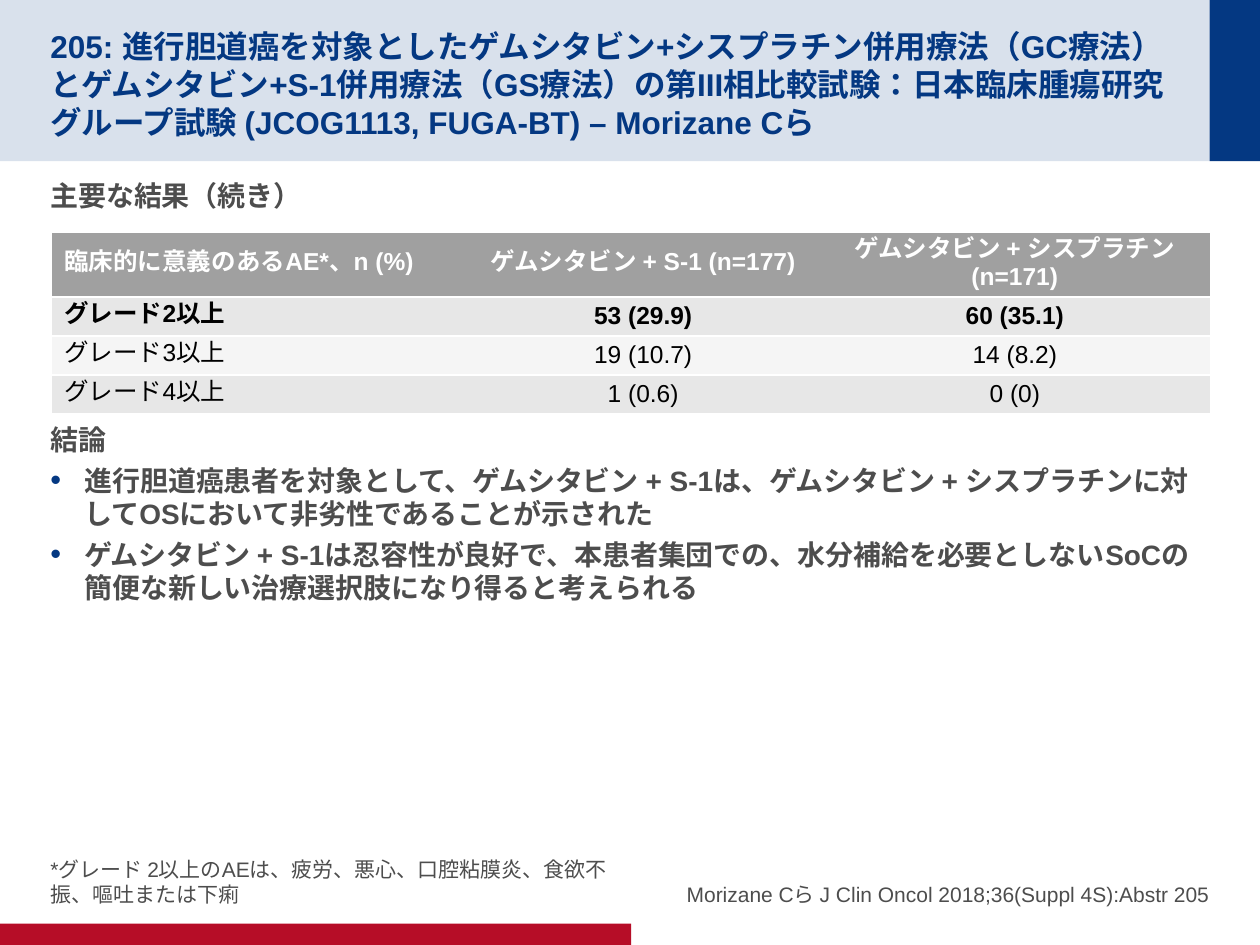
from dataclasses import dataclass

from lxml.etree import SubElement
from pptx import Presentation
from pptx.dml.color import RGBColor
from pptx.enum.lang import MSO_LANGUAGE_ID as Lang
from pptx.enum.shapes import MSO_SHAPE as Shape
from pptx.enum.text import MSO_ANCHOR as Anchor, MSO_AUTO_SIZE as AutoSize, PP_ALIGN as Align
from pptx.oxml.ns import qn
from pptx.util import Inches, Pt


@dataclass(frozen=True)
class Theme:
    font: str = "Arial"
    navy: str = "043882"
    pale_navy: str = "D9E1EC"
    red: str = "B60D27"
    text: str = "4D4D4D"
    black: str = "000000"
    white: str = "FFFFFF"
    header: str = "A0A0A0"
    bands: tuple = ("E7E7E7", "F5F5F5")
    title_size: int = 18
    body_size: int = 16
    table_size: int = 14
    note_size: int = 12


THEME = Theme()
LEFT, RIGHT = 0.4, 9.6

TITLE = ("205: 進行胆道癌を対象としたゲムシタビン+シスプラチン併用療法（GC療法）と"
         "ゲムシタビン+S-1併用療法（GS療法）の第III相比較試験：日本臨床腫瘍研究グループ試験 "
         "(JCOG1113, FUGA-BT) – Morizane Cら")
CONCLUSIONS = (
    "進行胆道癌患者を対象として、ゲムシタビン + S-1は、ゲムシタビン + シスプラチンに"
    "対してOSにおいて非劣性であることが示された",
    "ゲムシタビン + S-1は忍容性が良好で、本患者集団での、水分補給を必要としないSoCの"
    "簡便な新しい治療選択肢になり得ると考えられる",
)
FOOTNOTE = "*グレード 2以上のAEは、疲労、悪心、口腔粘膜炎、食欲不振、嘔吐または下痢"
CITATION = "Morizane Cら J Clin Oncol 2018;36(Suppl 4S):Abstr 205"
EVENTS = (
    ("臨床的に意義のあるAE*、n (%)", "ゲムシタビン + S-1 (n=177)",
     "ゲムシタビン + シスプラチン (n=171)"),
    ("グレード2以上", "53 (29.9)", "60 (35.1)"),
    ("グレード3以上", "19 (10.7)", "14 (8.2)"),
    ("グレード4以上", "1 (0.6)", "0 (0)"),
)


def rgb(value):
    return RGBColor.from_string(value)


def write(tf, text, size=THEME.body_size, color=THEME.text, bold=False, align=Align.LEFT,
          before=0, after=0, line=None, bullet=False):
    """Fill the empty first paragraph, or add another one."""
    p = tf.paragraphs[0] if not tf.text else tf.add_paragraph()
    p.alignment, p.space_before, p.space_after = align, Pt(before), Pt(after)
    if line:
        p.line_spacing = Pt(line)
    r = p.add_run()
    r.text = text
    r.font.name, r.font.size, r.font.bold = THEME.font, Pt(size), bold
    r.font.color.rgb = rgb(color)
    r.font.language_id = Lang.JAPANESE
    set_bullet(p, bullet)


def set_bullet(p, on):
    pPr = p._p.get_or_add_pPr()
    hang = Inches(0.27) if on else 0
    pPr.set("marL", str(hang))
    pPr.set("indent", str(-hang))
    if not on:
        SubElement(pPr, qn("a:buNone"))
        return
    SubElement(SubElement(pPr, qn("a:buClr")), qn("a:srgbClr"), val=THEME.navy)
    SubElement(pPr, qn("a:buSzPct"), val="110000")
    SubElement(pPr, qn("a:buFont"), typeface=THEME.font)
    SubElement(pPr, qn("a:buChar"), char="•")


def place(ph, left, top, width, height, anchor, inset_top=0, inset_bottom=0):
    """Move a placeholder and return its text frame."""
    ph.left, ph.top, ph.width, ph.height = map(Inches, (left, top, width, height))
    tf = ph.text_frame
    tf.word_wrap, tf.auto_size, tf.vertical_anchor = True, AutoSize.NONE, anchor
    tf.margin_left = tf.margin_right = 0
    tf.margin_top, tf.margin_bottom = Inches(inset_top), Inches(inset_bottom)
    return tf


def add_band(s, left, top, width, height, color):
    """Add a plain colour band behind the placeholders."""
    sp = s.shapes.add_shape(Shape.RECTANGLE, *map(Inches, (left, top, width, height)))
    sp.shadow.inherit = False
    sp.fill.solid()
    sp.fill.fore_color.rgb = rgb(color)
    sp.line.fill.background()
    s.shapes.title.element.addprevious(sp.element)


def set_borders(cell):
    """White rules above and below, none at the sides."""
    tcPr = cell._tc.get_or_add_tcPr()
    for side in ("lnL", "lnR"):
        SubElement(SubElement(tcPr, qn(f"a:{side}"), w="0"), qn("a:noFill"))
    for side in ("lnT", "lnB"):
        ln = SubElement(tcPr, qn(f"a:{side}"), w=str(Pt(1)))
        SubElement(SubElement(ln, qn("a:solidFill")), qn("a:srgbClr"), val=THEME.white)


def add_event_table(s):
    widths, heights = (3.29, 2.81, 3.09), (0.51, 0.31, 0.31, 0.31)
    table = s.shapes.add_table(len(heights), len(widths), Inches(0.41), Inches(1.84),
                               Inches(sum(widths)), Inches(sum(heights))).table
    for col, width in zip(table.columns, widths):
        col.width = Inches(width)
    for i, (row, values) in enumerate(zip(table.rows, EVENTS)):
        row.height = Inches(heights[i])
        for j, (cell, value) in enumerate(zip(row.cells, values)):
            set_borders(cell)
            cell.fill.solid()
            cell.fill.fore_color.rgb = rgb(THEME.bands[(i - 1) % 2] if i else THEME.header)
            cell.vertical_anchor = Anchor.MIDDLE
            write(cell.text_frame, value, size=THEME.table_size, bold=i < 2, line=15,
                  color=THEME.black if i else THEME.white,
                  align=Align.CENTER if j else Align.LEFT)


def main():
    prs = Presentation()
    prs.slide_width, prs.slide_height = Inches(10), Inches(7.5)
    s = prs.slides.add_slide(prs.slide_layouts.get_by_name("Comparison"))
    title, note, body, source, spare = s.placeholders
    spare.element.getparent().remove(spare.element)

    add_band(s, 0, 0, RIGHT, 1.28, THEME.pale_navy)
    add_band(s, RIGHT, 0, 10 - RIGHT, 1.28, THEME.navy)
    add_band(s, 0, 7.33, 5.01, 0.17, THEME.red)

    tf = place(title, LEFT, 0.2, 9.01, 0.88, Anchor.MIDDLE, inset_top=0.05)
    write(tf, TITLE, size=THEME.title_size, color=THEME.navy, bold=True)

    tf = place(body, LEFT, 1.37, RIGHT - LEFT, 5.19, Anchor.TOP, 0.05, 0.05)
    write(tf, "主要な結果（続き）", bold=True, after=4)
    write(tf, "結論", bold=True, before=116, after=4)
    for text in CONCLUSIONS:
        write(tf, text, bold=True, after=4, bullet=True)

    note_width = 4.52
    for ph, left, text, align in ((note, LEFT, FOOTNOTE, Align.LEFT),
                                  (source, RIGHT - note_width, CITATION, Align.RIGHT)):
        tf = place(ph, left, 6.67, note_width, 0.53, Anchor.BOTTOM)
        write(tf, text, size=THEME.note_size, align=align, after=4)

    add_event_table(s)
    prs.save("out.pptx")


if __name__ == "__main__":
    main()
